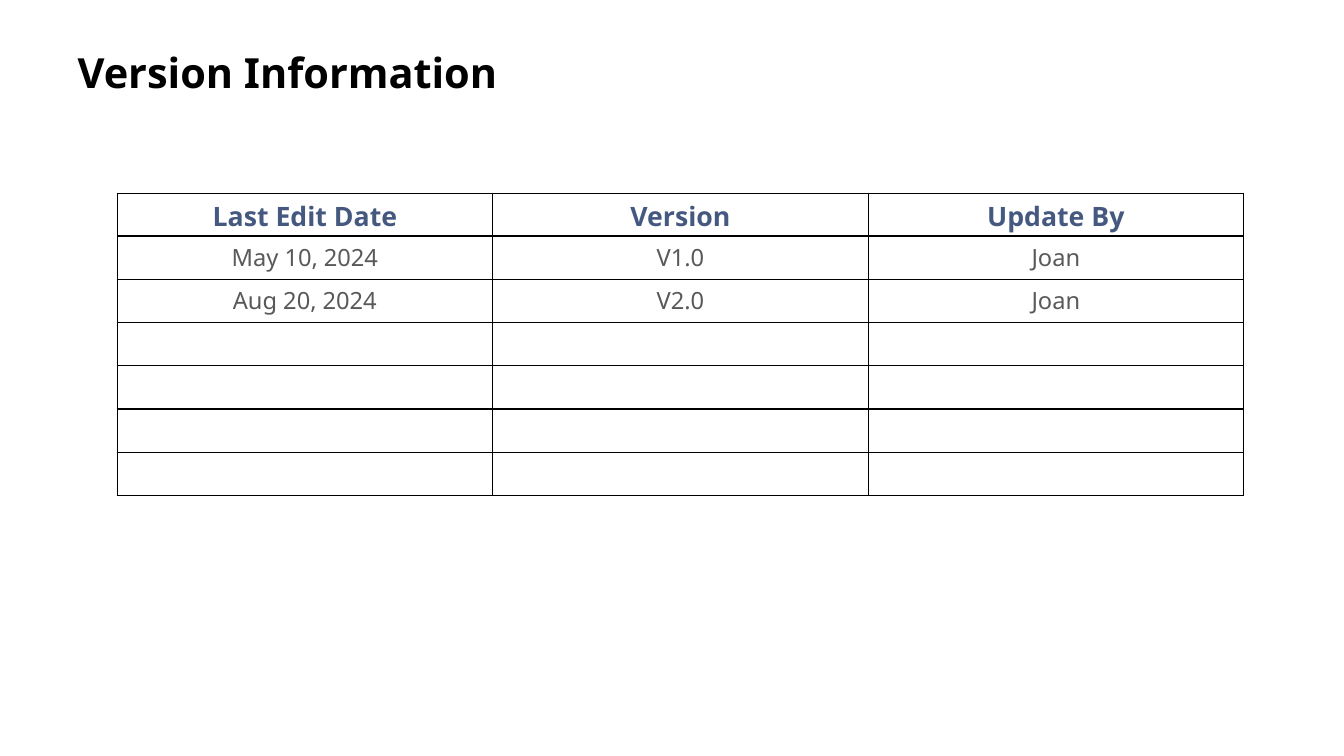
from lxml.etree import SubElement
from pptx import Presentation
from pptx.dml.color import RGBColor
from pptx.enum.text import MSO_ANCHOR as Anchor, PP_ALIGN as Align
from pptx.oxml.ns import qn
from pptx.util import Cm, Pt

TITLE = "Version Information"
HEADERS = ("Last Edit Date", "Version", "Update By")
VERSIONS = [
    ("May 10, 2024", "V1.0", "Joan"),
    ("Aug 20, 2024", "V2.0", "Joan"),
]
EMPTY_ROWS = 4
FONT = "Noto Sans"
BLACK, BLUE, GREY = "000000", "455880", "595959"
TABLE_LEFT, TABLE_TOP, COLUMN_WIDTH = 2.79, 4.6, 8.94
HEADER_HEIGHT, ROW_HEIGHT = 1.0, 1.03


def style(paragraph, size, color, bold=False):
    font = paragraph.font
    font.name, font.size, font.bold = FONT, Pt(size), bold
    font.color.rgb = RGBColor.from_string(color)


def add_borders(cell):
    properties = cell._tc.get_or_add_tcPr()
    for side in ("a:lnL", "a:lnR", "a:lnT", "a:lnB"):
        line = SubElement(properties, qn(side), w=str(Pt(1)))
        fill = SubElement(line, qn("a:solidFill"))
        SubElement(fill, qn("a:srgbClr"), val=BLACK)


def add_title(slide):
    box = slide.shapes.add_textbox(Cm(1.6), Cm(1.12), Cm(27.61), Cm(1.68))
    box.text_frame.word_wrap = True
    paragraph = box.text_frame.paragraphs[0]
    paragraph.text = TITLE
    paragraph.line_spacing = 0.9
    style(paragraph, 28, BLACK, bold=True)


def add_versions(slide):
    rows = [HEADERS, *VERSIONS] + [("",) * len(HEADERS)] * EMPTY_ROWS
    heights = [HEADER_HEIGHT] + [ROW_HEIGHT] * (len(rows) - 1)
    table = slide.shapes.add_table(
        len(rows), len(HEADERS), Cm(TABLE_LEFT), Cm(TABLE_TOP),
        Cm(COLUMN_WIDTH * len(HEADERS)), Cm(sum(heights))).table
    table.first_row = table.horz_banding = False
    for column in table.columns:
        column.width = Cm(COLUMN_WIDTH)
    for index, (texts, height) in enumerate(zip(rows, heights)):
        table.rows[index].height = Cm(height)
        for cell, text in zip(table.rows[index].cells, texts):
            cell.vertical_anchor = Anchor.MIDDLE
            add_borders(cell)
            cell.fill.background()
            paragraph = cell.text_frame.paragraphs[0]
            paragraph.text = text
            paragraph.alignment = Align.CENTER
            if index == 0:
                style(paragraph, 18, BLUE, bold=True)
            else:
                style(paragraph, 16, GREY)


def main():
    """Build the version information slide."""
    presentation = Presentation()
    presentation.slide_width, presentation.slide_height = Cm(32), Cm(18)
    slide = presentation.slides.add_slide(presentation.slide_layouts[6])
    add_title(slide)
    add_versions(slide)
    presentation.save("out.pptx")


if __name__ == "__main__":
    main()
